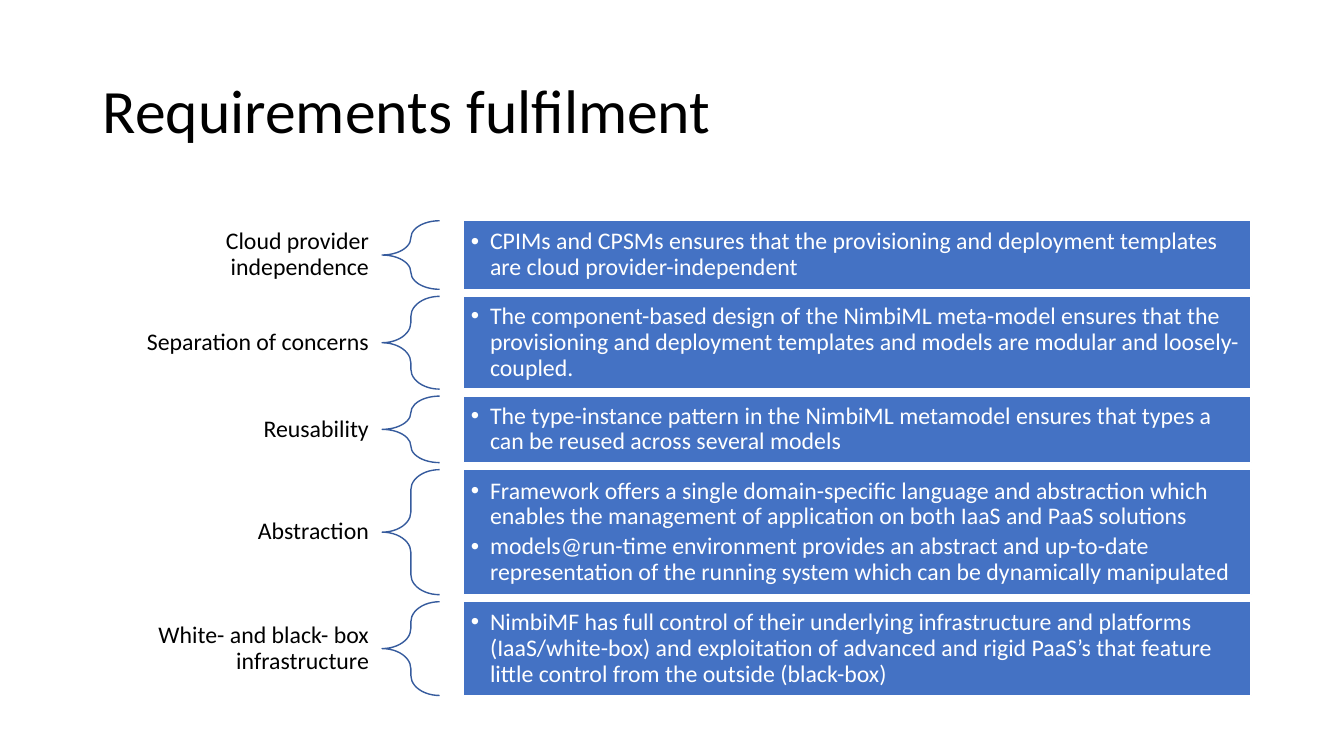
from dataclasses import dataclass

from lxml import etree
from pptx import Presentation
from pptx import util as u
from pptx.dml.color import RGBColor
from pptx.enum import shapes, text
from pptx.oxml import ns


@dataclass(frozen=True)
class Theme:
    font: str = "Calibri"
    title_size: int = 44
    text_size: int = 17
    dark: str = "000000"
    light: str = "FFFFFF"
    bar: str = "4472C4"
    brace: str = "365B9D"
    line_spacing: float = 0.9


@dataclass(frozen=True)
class Requirement:
    name: str
    points: tuple[str, ...]
    height: float
    label_height: float = 0.37


THEME = Theme()
LABEL_LEFT, LABEL_WIDTH = 0.92, 2.87
BRACE_LEFT, BRACE_WIDTH = 3.79, 0.57
BAR_LEFT, BAR_WIDTH = 4.6, 7.81
FIRST_TOP, ROW_GAP = 2.19, 0.07
BULLET_INDENT = 0.19

REQUIREMENTS = (
    Requirement("Cloud provider independence", (
        "CPIMs and CPSMs ensures that the provisioning and deployment templates "
        "are cloud provider-independent",
    ), 0.68, 0.62),
    Requirement("Separation of concerns", (
        "The component-based design of the NimbiML meta-model ensures that the "
        "provisioning and deployment templates and models are modular and loosely-coupled.",
    ), 0.92),
    Requirement("Reusability", (
        "The type-instance pattern in the NimbiML metamodel ensures that types a "
        "can be reused across several models",
    ), 0.66),
    Requirement("Abstraction", (
        "Framework offers a single domain-specific language and abstraction which "
        "enables the management of application on both IaaS and PaaS solutions",
        "models@run-time environment provides an abstract and up-to-date "
        "representation of the running system which can be dynamically manipulated",
    ), 1.24),
    Requirement("White- and black- box infrastructure", (
        "NimbiMF has full control of their underlying infrastructure and platforms "
        "(IaaS/white-box) and exploitation of advanced and rigid PaaS’s that feature "
        "little control from the outside (black-box)",
    ), 0.93, 0.62),
)


def format_text(frame, size: int, color: str, align, inset_x: float, inset_y: float) -> None:
    frame.word_wrap = True
    frame.auto_size = text.MSO_AUTO_SIZE.NONE
    frame.vertical_anchor = text.MSO_ANCHOR.MIDDLE
    frame.margin_left = frame.margin_right = u.Inches(inset_x)
    frame.margin_top = frame.margin_bottom = u.Inches(inset_y)
    for paragraph in frame.paragraphs:
        paragraph.alignment = align
        paragraph.line_spacing = THEME.line_spacing
        for run in paragraph.runs:
            run.font.name = THEME.font
            run.font.size = u.Pt(size)
            run.font.color.rgb = RGBColor.from_string(color)


def add_bullet(paragraph) -> None:
    paragraph.level = 1
    paragraph.space_after = u.Pt(3)
    properties = paragraph._p.get_or_add_pPr()
    properties.set("marL", str(u.Inches(BULLET_INDENT)))
    properties.set("indent", str(u.Inches(-BULLET_INDENT)))
    etree.SubElement(properties, ns.qn("a:buFont")).set("typeface", "Arial")
    etree.SubElement(properties, ns.qn("a:buChar")).set("char", "•")


def add_title(slide, title: str) -> None:
    shape = slide.shapes.title
    shape.left, shape.top = u.Inches(0.92), u.Inches(0.4)
    shape.width, shape.height = u.Inches(11.5), u.Inches(1.45)
    shape.text_frame.text = title
    format_text(shape.text_frame, THEME.title_size, THEME.dark, text.PP_ALIGN.LEFT, 0.1, 0.05)


def add_label(slide, requirement: Requirement, top: float) -> None:
    label_top = top + (requirement.height - requirement.label_height) / 2
    label = slide.shapes.add_textbox(
        u.Inches(LABEL_LEFT), u.Inches(label_top),
        u.Inches(LABEL_WIDTH), u.Inches(requirement.label_height))
    label.text_frame.text = requirement.name
    format_text(label.text_frame, THEME.text_size, THEME.dark, text.PP_ALIGN.RIGHT, 0.13, 0.05)


def add_outlined_shape(slide, kind, left: float, top: float, width: float, height: float, line: str):
    shape = slide.shapes.add_shape(
        kind, u.Inches(left), u.Inches(top), u.Inches(width), u.Inches(height))
    shape.shadow.inherit = False
    shape.line.color.rgb = RGBColor.from_string(line)
    shape.line.width = u.Pt(1)
    return shape


def add_brace(slide, requirement: Requirement, top: float) -> None:
    brace = add_outlined_shape(slide, shapes.MSO_SHAPE.LEFT_BRACE, BRACE_LEFT, top,
                               BRACE_WIDTH, requirement.height, THEME.brace)
    brace.fill.background()
    brace.adjustments[0] = 0.35
    brace.adjustments[1] = 0.5


def add_bar(slide, requirement: Requirement, top: float) -> None:
    bar = add_outlined_shape(slide, shapes.MSO_SHAPE.RECTANGLE, BAR_LEFT, top,
                             BAR_WIDTH, requirement.height, THEME.light)
    bar.fill.solid()
    bar.fill.fore_color.rgb = RGBColor.from_string(THEME.bar)
    bar.text_frame.text = "\n".join(requirement.points)
    format_text(bar.text_frame, THEME.text_size, THEME.light, text.PP_ALIGN.LEFT, 0.07, 0.07)
    for paragraph in bar.text_frame.paragraphs:
        add_bullet(paragraph)


def main() -> None:
    presentation = Presentation()
    presentation.slide_width, presentation.slide_height = u.Inches(13.33), u.Inches(7.5)
    slide = presentation.slides.add_slide(presentation.slide_layouts.get_by_name("Title Only"))
    add_title(slide, "Requirements fulfilment")
    top = FIRST_TOP
    for requirement in REQUIREMENTS:
        add_label(slide, requirement, top)
        add_brace(slide, requirement, top)
        add_bar(slide, requirement, top)
        top += requirement.height + ROW_GAP
    presentation.save("out.pptx")


if __name__ == "__main__":
    main()
